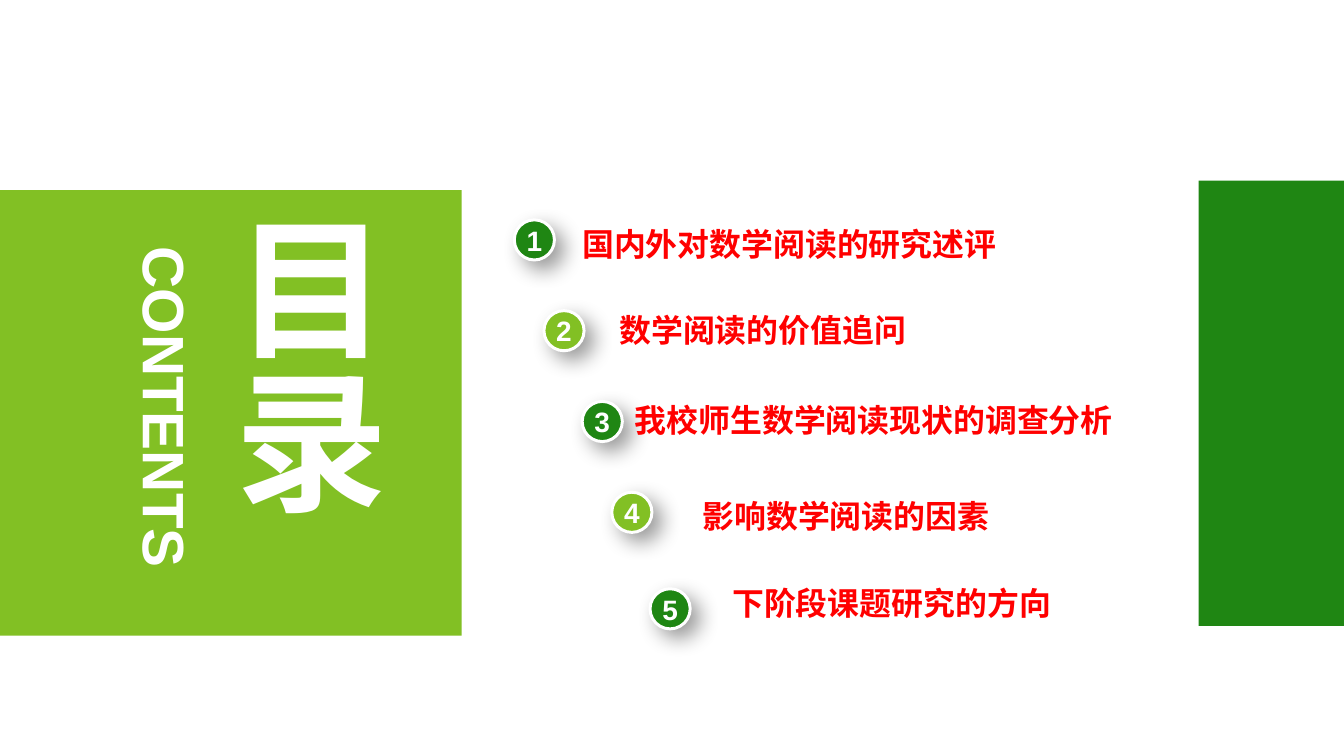
from lxml import etree
from pptx import Presentation
from pptx.dml.color import RGBColor
from pptx.enum.shapes import MSO_SHAPE
from pptx.enum.text import MSO_ANCHOR, MSO_AUTO_SIZE, PP_ALIGN
from pptx.oxml.ns import qn
from pptx.util import Inches, Pt

OVAL, RECTANGLE = MSO_SHAPE.OVAL, MSO_SHAPE.RECTANGLE
TOP, MIDDLE = MSO_ANCHOR.TOP, MSO_ANCHOR.MIDDLE
LEFT, CENTER = PP_ALIGN.LEFT, PP_ALIGN.CENTER
FIT_SHAPE = MSO_AUTO_SIZE.SHAPE_TO_FIT_TEXT
TITLE_ONLY = 5

LIGHT_GREEN, DARK_GREEN = "82C024", "1F8613"
WHITE, RED, BLACK = "FFFFFF", "FF0000", "000000"
CHINESE_FONT = "Noto Sans CJK SC"
BADGE_SIZE = 0.42
LABEL_HEIGHT = 0.4

AGENDA = [
    ("国内外对数学阅读的研究述评", "Calibri", (5.38, 2.3), (6.09, 2.35), 4.65),
    ("数学阅读的价值追问", "Calibri", (5.69, 3.25), (6.48, 3.25), 3.54),
    ("我校师生数学阅读现状的调查分析", "Calibri", (6.09, 4.2), (6.64, 4.19), 5.59),
    ("影响数学阅读的因素", "Calibri", (6.4, 5.15), (7.35, 5.2), 3.46),
    ("下阶段课题研究的方向", CHINESE_FONT, (6.8, 6.16), (7.66, 6.11), 4.49),
]


def color(value):
    """Turn a hex string into a colour."""
    return RGBColor.from_string(value)


def write_text(shape, text, size, font, fill, align=CENTER, anchor=MIDDLE):
    """Write one bold run into a shape without margins."""
    frame = shape.text_frame
    frame.word_wrap = True
    frame.vertical_anchor = anchor
    frame.margin_left = frame.margin_right = 0
    frame.margin_top = frame.margin_bottom = 0
    paragraph = frame.paragraphs[0]
    paragraph.alignment = align
    run = paragraph.add_run()
    run.text = text
    run.font.size = Pt(size)
    run.font.bold = True
    run.font.name = font
    run.font.color.rgb = color(fill)
    east_asian = etree.Element(qn("a:ea"), typeface=CHINESE_FONT)
    run.font._element.find(qn("a:latin")).addnext(east_asian)


def add_panel(slide, box, fill):
    """Add a plain coloured panel."""
    panel = slide.shapes.add_shape(RECTANGLE, *map(Inches, box))
    panel.shadow.inherit = False
    panel.fill.solid()
    panel.fill.fore_color.rgb = color(fill)
    panel.line.fill.background()


def add_soft_shadow(shape):
    """Give a shape a blurred shadow towards the lower right."""
    shape.shadow.inherit = False
    effects = shape._element.spPr.find(qn("a:effectLst"))
    shadow = etree.SubElement(
        effects, qn("a:outerShdw"), blurRad=str(Pt(16)), dist=str(Pt(9)),
        dir=str(45 * 60000), algn="tl", rotWithShape="0")
    tint = etree.SubElement(shadow, qn("a:srgbClr"), val=BLACK)
    etree.SubElement(tint, qn("a:alpha"), val="40000")


def add_badge(slide, left, top, number):
    """Add a numbered circle, dark for odd and light for even numbers."""
    badge = slide.shapes.add_shape(
        OVAL, Inches(left), Inches(top), Inches(BADGE_SIZE), Inches(BADGE_SIZE))
    badge.fill.solid()
    badge.fill.fore_color.rgb = color(DARK_GREEN if number % 2 else LIGHT_GREEN)
    badge.line.color.rgb = color(WHITE)
    badge.line.width = Pt(2.25)
    add_soft_shadow(badge)
    write_text(badge, str(number), 21.1, "Arial", WHITE)


def add_agenda(slide):
    """Add the numbered agenda items."""
    for number, (text, font, badge, label, width) in enumerate(AGENDA, 1):
        add_badge(slide, *badge, number)
        box = slide.shapes.add_textbox(
            *map(Inches, (*label, width, LABEL_HEIGHT)))
        write_text(box, text, 24, font, RED, LEFT)
        box.text_frame.auto_size = FIT_SHAPE


def add_heading(slide, left, top, width, height):
    """Add the green heading panel with its vertical title and subtitle."""
    add_panel(slide, (left, top, width, height), LIGHT_GREEN)
    title = slide.shapes.title
    title.left, title.top = Inches(left + 2.23), Inches(top + 0.23)
    title.width, title.height = Inches(1.94), Inches(4.15)
    write_text(title, "目录", 115, "Arial", WHITE)
    title.text_frame.auto_size = FIT_SHAPE
    title.text_frame._txBody.bodyPr.set("vert", "eaVert")
    slide.shapes._spTree.append(title._element)

    subtitle = slide.shapes.add_textbox(
        Inches(left - 0.07), Inches(top + 1.9), Inches(3.61), Inches(0.74))
    subtitle.rotation = 90
    write_text(subtitle, "CONTENTS", 44, "Arial", WHITE, anchor=TOP)
    subtitle.text_frame.auto_size = FIT_SHAPE


def main():
    """Build and save the contents slide."""
    presentation = Presentation()
    presentation.slide_width = Inches(14.06)
    presentation.slide_height = Inches(7.91)
    slide = presentation.slides.add_slide(presentation.slide_layouts[TITLE_ONLY])
    add_heading(slide, 0, 1.99, 4.83, 4.66)
    add_agenda(slide)
    add_panel(slide, (12.54, 1.89, 1.52, 4.66), DARK_GREEN)
    presentation.save("out.pptx")


if __name__ == "__main__":
    main()
